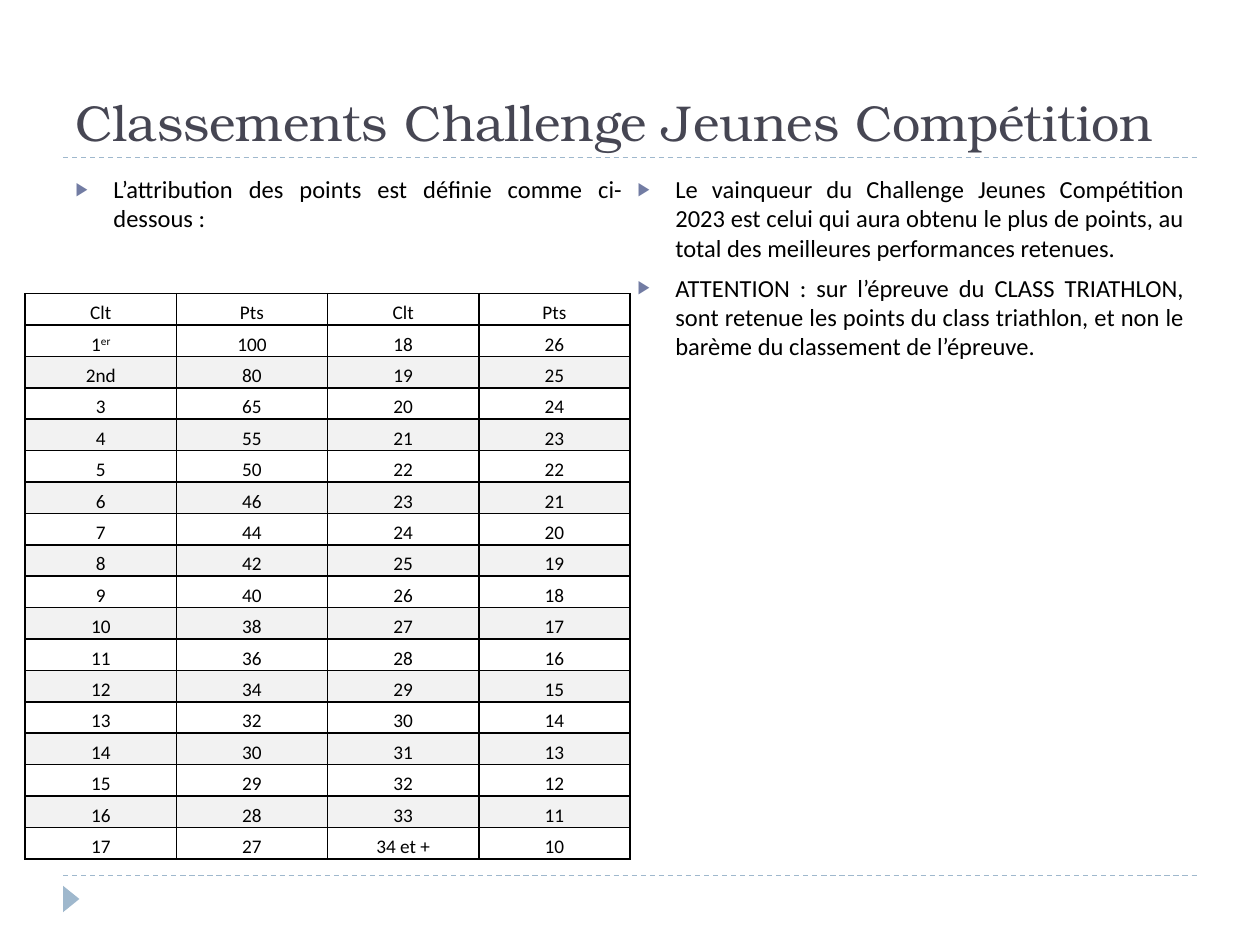
from lxml import etree
from pptx import Presentation
from pptx import util as u
from pptx.dml import color
from pptx.enum import dml, shapes, text
from pptx.oxml import ns

Pt = u.Pt


def rgb(value):
    return color.RGBColor.from_string(value)


def add_xml(parent, tag, **attrs):
    child = etree.SubElement(parent, ns.qn(tag))
    for name, value in attrs.items():
        child.set(name, str(value))
    return child


def add_run(p, content, font="Calibri", size=14, colour="000000", baseline=None):
    r = p.add_run()
    r.text = content
    r.font.name = font
    r.font.size = Pt(size)
    r.font.color.rgb = rgb(colour)
    if baseline:
        r.font._element.set("baseline", str(baseline))


class SlideBuilder:
    ACCENT = "9FB8CD"
    BULLET = "727CA3"
    TITLE = "464653"
    BAND = "F2F2F2"
    BORDER = "000000"

    def __init__(self, s):
        self.s = s

    def place(self, sp, left, top, width, height):
        sp.left, sp.top, sp.width, sp.height = map(Pt, (left, top, width, height))

    def rule(self, left, right, y):
        line = self.s.shapes.add_connector(
            shapes.MSO_CONNECTOR.STRAIGHT, Pt(left), Pt(y), Pt(right), Pt(y))
        line.line.color.rgb = rgb(self.ACCENT)
        line.line.width = Pt(0.75)
        line.line.dash_style = dml.MSO_LINE.DASH
        add_xml(line._element.spPr, "a:effectLst")

    def marker(self, left, top, width, height):
        sp = self.s.shapes.add_shape(
            shapes.MSO_SHAPE.ISOSCELES_TRIANGLE,
            Pt(left), Pt(top), Pt(width), Pt(height))
        sp.rotation = 90
        sp.shadow.inherit = False
        sp.fill.solid()
        sp.fill.fore_color.rgb = rgb(self.ACCENT)
        sp.line.fill.background()

    def title(self, content, *box):
        sp = self.s.shapes.title
        self.place(sp, *box)
        tf = sp.text_frame
        tf.auto_size = text.MSO_AUTO_SIZE.NONE
        tf.vertical_anchor = text.MSO_ANCHOR.BOTTOM
        p = tf.paragraphs[0]
        p.alignment = text.PP_ALIGN.LEFT
        add_run(p, content, font="TeX Gyre Bonum", size=28.8, colour=self.TITLE)

    def bullets(self, index, items, *box):
        sp = self.s.placeholders[index]
        self.place(sp, *box)
        tf = sp.text_frame
        tf.auto_size = text.MSO_AUTO_SIZE.NONE
        for i, item in enumerate(items):
            p = tf.add_paragraph() if i else tf.paragraphs[0]
            p.alignment = text.PP_ALIGN.JUSTIFY
            p.space_before = Pt(6)
            pPr = p._p.get_or_add_pPr()
            pPr.set("marL", str(Pt(21.6)))
            pPr.set("indent", str(-Pt(21.6)))
            add_xml(add_xml(pPr, "a:buClr"), "a:srgbClr", val=self.BULLET)
            add_xml(pPr, "a:buSzPct", val=76000)
            add_xml(pPr, "a:buChar", char="▶")
            add_run(p, item)

    def cell(self, cell, content, banded):
        cell.margin_left = cell.margin_right = Pt(3.6)
        cell.margin_top = cell.margin_bottom = 0
        cell.vertical_anchor = text.MSO_ANCHOR.BOTTOM
        tcPr = cell._tc.get_or_add_tcPr()
        for side in ("a:lnL", "a:lnR", "a:lnT", "a:lnB"):
            ln = add_xml(tcPr, side, w=Pt(1))
            add_xml(add_xml(ln, "a:solidFill"), "a:srgbClr", val=self.BORDER)
        if banded:
            cell.fill.solid()
            cell.fill.fore_color.rgb = rgb(self.BAND)
        else:
            cell.fill.background()
        p = cell.text_frame.paragraphs[0]
        p.alignment = text.PP_ALIGN.CENTER
        p.line_spacing = 1.15
        number, *suffix = content.split("^")
        add_run(p, number, size=11)
        for part in suffix:
            add_run(p, part, size=11, baseline=30000)

    def table(self, rows, left, top, width, height):
        table = self.s.shapes.add_table(
            len(rows), len(rows[0]), Pt(left), Pt(top), Pt(width), Pt(height)).table
        table.first_row = table.horz_banding = False
        for column in table.columns:
            column.width = Pt(width / len(rows[0]))
        for i, values in enumerate(rows):
            table.rows[i].height = Pt(height / len(rows))
            for j, value in enumerate(values):
                self.cell(table.cell(i, j), value, banded=i > 0 and i % 2 == 0)


def main():
    prs = Presentation()
    prs.slide_width, prs.slide_height = Pt(720), Pt(540)
    slide = SlideBuilder(prs.slides.add_slide(prs.slide_layouts[3]))

    for y in (500.4, 90):
        slide.rule(36, 684, y)
    slide.marker(33.12, 509.04, 15.12, 9.36)
    slide.title("Classements\u00a0Challenge Jeunes Compétition", 36, 12.24, 648, 77.76)

    columns = [
        ["L’attribution des points est définie comme ci-dessous\u00a0: "],
        ["Le vainqueur du Challenge Jeunes Compétition 2023 est celui qui aura obtenu "
         "le plus de points, au total des meilleures performances retenues. ",
         "ATTENTION : sur l’épreuve du CLASS TRIATHLON, sont retenue les points du "
         "class triathlon, et non le barème du classement de l’épreuve. "],
    ]
    for i, items in enumerate(columns):
        slide.bullets(i + 1, items, 36 + i * 321.12, 95.76, 326.88, 388.8)

    ranks = ["1^er", "2nd", *map(str, range(3, 34)), "34 et +"]
    points = [100, 80, 65, 55, 50, *range(46, 30, -2), *range(30, 9, -1)]
    scores = list(zip(ranks, map(str, points)))
    half = len(scores) // 2
    rows = [("Clt", "Pts") * 2]
    rows += [a + b for a, b in zip(scores[:half], scores[half:])]
    slide.table(rows, 14.4, 167.76, 345.6, 323.28)

    prs.save("out.pptx")


if __name__ == "__main__":
    main()
